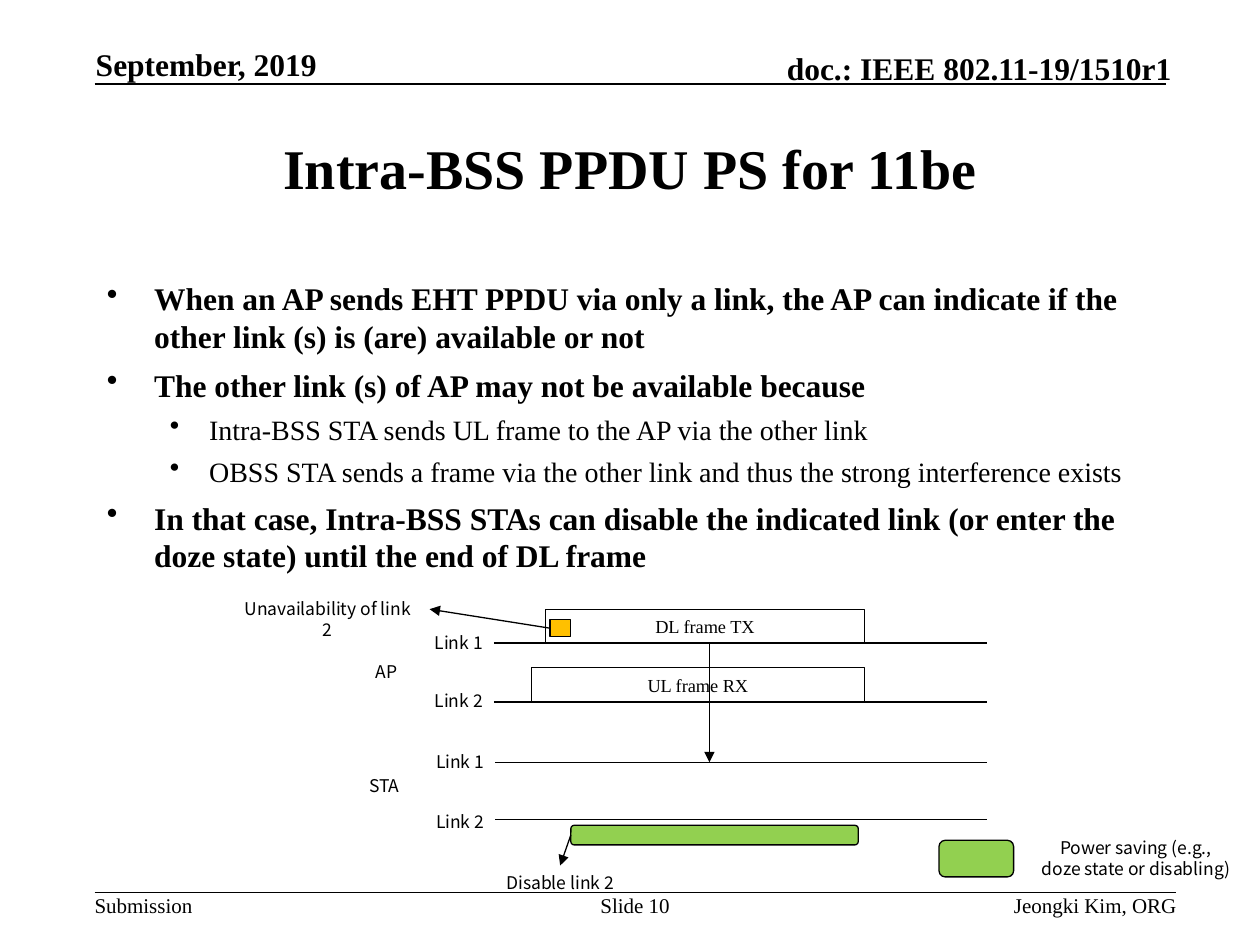
from dataclasses import dataclass

from lxml.etree import SubElement
from pptx import Presentation
from pptx.dml.color import RGBColor
from pptx.enum.shapes import MSO_CONNECTOR as Conn, MSO_SHAPE as Geo
from pptx.enum.text import MSO_ANCHOR as Anchor, PP_ALIGN as Align
from pptx.oxml.ns import qn
from pptx.util import Pt

SERIF = "Times New Roman"
SANS = "Noto Sans CJK KR"
BLACK, GREEN, AMBER = "000000", "92D050", "FFC000"
TOP, LEFT, RIGHT = 0, 1, 3


@dataclass
class Style:
    size: float
    face: str = SERIF
    bold: bool = False


@dataclass
class Label:
    text: str
    box: tuple
    style: Style
    align: Align = Align.LEFT
    anchor: Anchor = Anchor.TOP
    inset: bool = False
    wrap: bool = True


@dataclass
class Lane:
    name: str
    y: float
    left: float
    top: float


@dataclass
class Point:
    text: str
    level: int = 0


HEAD = Style(18, bold=True)
FOOT = Style(12)
NOTE = Style(10, SANS)
FRAME = Style(10.5)

LABELS = [
    Label("September, 2019", (54.7, 26, 148, 21.6), HEAD, anchor=Anchor.BOTTOM),
    Label("doc.: IEEE 802.11-19/1510r1", (393.8, 28, 275.8, 21.6), HEAD,
          Align.RIGHT, Anchor.BOTTOM),
    Label("Intra-BSS PPDU PS for 11be", (54, 54, 612, 83.5),
          Style(32, bold=True), Align.CENTER, Anchor.MIDDLE, True),
    Label("Submission", (54, 510, 56, 14.4), FOOT, wrap=False),
    Label("Slide 10", (342, 510, 41.8, 28.8), FOOT, Align.CENTER),
    Label("Jeongki Kim, ORG", (422, 510, 250.4, 14.4), FOOT, Align.RIGHT),
]

POINTS = [
    Point("When an AP sends EHT PPDU via only a link, the AP can indicate "
          "if the other link (s) is (are) available or not"),
    Point("The other link (s) of AP may not be available because"),
    Point("Intra-BSS STA sends UL frame to the AP via the other link", 1),
    Point("OBSS STA sends a frame via the other link and thus the strong "
          "interference exists", 1),
    Point("In that case, Intra-BSS STAs can disable the indicated link "
          "(or enter the doze state) until the end of DL frame"),
]
# Style, left margin, hanging indent and space before of each level
LEVELS = [(HEAD, 27, 27, 6), (Style(16), 58.5, 22.5, 5)]

LANES = [
    Lane("Link 1", 367.5, 282.2, 357.8),
    Lane("Link 2", 401.2, 282.2, 391),
    Lane("Link 1", 435.6, 283, 425.5),
    Lane("Link 2", 468.5, 283, 460),
]
LANE_END = 563.8


def color(code: str) -> RGBColor:
    return RGBColor.from_string(code)


def write(para, text: str, style: Style) -> None:
    run = para.add_run()
    run.text = text
    font = run.font
    font.size, font.name, font.bold = Pt(style.size), style.face, style.bold
    font.color.rgb = color(BLACK)


def add_label(slide, item: Label):
    box = slide.shapes.add_textbox(*map(Pt, item.box))
    frame = box.text_frame
    frame.word_wrap = item.wrap
    frame.vertical_anchor = item.anchor
    if not item.inset:
        frame.margin_left = frame.margin_right = 0
        frame.margin_top = frame.margin_bottom = 0
    for i, line in enumerate(item.text.split("\n")):
        para = frame.add_paragraph() if i else frame.paragraphs[0]
        para.alignment = item.align
        write(para, line, item.style)
    return box


def add_note(slide, text: str, *box: float, wrap: bool = True):
    return add_label(slide, Label(text, box, NOTE, Align.CENTER,
                                  inset=True, wrap=wrap))


def add_points(slide, points: list) -> None:
    frame = slide.shapes.add_textbox(Pt(54), Pt(156.2), Pt(612), Pt(324)).text_frame
    frame.word_wrap = True
    for i, point in enumerate(points):
        style, margin, hang, gap = LEVELS[point.level]
        para = frame.add_paragraph() if i else frame.paragraphs[0]
        para.level = point.level
        props = para._p.get_or_add_pPr()
        props.set("marL", str(Pt(margin)))
        props.set("indent", str(-Pt(hang)))
        SubElement(props, qn("a:buChar")).set("char", "•")
        if i:
            para.space_before = Pt(gap)
        write(para, point.text, style)


def add_box(slide, geo: Geo, *box: float, fill: str = "", text: str = ""):
    shape = slide.shapes.add_shape(geo, *map(Pt, box))
    shape.shadow.inherit = False
    if fill:
        shape.fill.solid()
        shape.fill.fore_color.rgb = color(fill)
    else:
        shape.fill.background()
    shape.line.color.rgb = color(BLACK)
    shape.line.width = Pt(0.75)
    if text:
        para = shape.text_frame.paragraphs[0]
        para.alignment = Align.CENTER
        write(para, text, FRAME)
    return shape


def add_line(slide, *ends: float, width: float = 0.75, arrow: bool = False):
    line = slide.shapes.add_connector(Conn.STRAIGHT, *map(Pt, ends))
    line.line.color.rgb = color(BLACK)
    line.line.width = Pt(width)
    if arrow:
        SubElement(line.line._get_or_add_ln(), qn("a:tailEnd")).set("type", "triangle")
    SubElement(line._element.spPr, qn("a:effectLst"))
    return line


def add_link(slide, start, side: int, end, edge: int) -> None:
    """Join the sides of two shapes with an arrow."""
    line = add_line(slide, 0, 0, 0, 0, arrow=True)
    line.begin_connect(start, side)
    line.end_connect(end, edge)


def add_chart(slide) -> None:
    """Draw the timing of the AP and STA links."""
    for lane in LANES:
        add_line(slide, lane.left, lane.y, LANE_END, lane.y)
        add_note(slide, lane.name, lane.left - 41, lane.top, 41.8, 19.4, wrap=False)
    add_note(slide, "AP", 200.6, 374.4, 40.3, 19.4)
    add_note(slide, "STA", 198.7, 439.5, 41.8, 19.4)

    add_box(slide, Geo.RECTANGLE, 311.8, 348.2, 182.2, 19.3, text="DL frame TX")
    add_box(slide, Geo.RECTANGLE, 303.6, 381.6, 190.4, 19.6, text="UL frame RX")
    add_line(slide, 405.4, LANES[0].y, 405.4, LANES[2].y, arrow=True)

    field = add_box(slide, Geo.RECTANGLE, 314.4, 354.2, 11.8, 9.6, fill=AMBER)
    busy = add_note(slide, "Unavailability of link 2", 128.9, 338.4, 116.6, 19.4)
    add_link(slide, field, LEFT, busy, RIGHT)

    doze = add_box(slide, Geo.ROUNDED_RECTANGLE, 326.2, 471.6, 164.2, 11.2, fill=GREEN)
    off = add_note(slide, "Disable link 2", 280.1, 494.6, 80, 19.4)
    add_link(slide, doze, LEFT, off, TOP)

    add_box(slide, Geo.ROUNDED_RECTANGLE, 536.6, 480.2, 42.6, 20.9, fill=GREEN)
    add_note(slide, "Power saving (e.g.,\ndoze state or disabling)",
             587.5, 474.5, 123.1, 31.7, wrap=False)


def main() -> None:
    deck = Presentation()
    deck.slide_width, deck.slide_height = Pt(720), Pt(540)
    slide = deck.slides.add_slide(deck.slide_layouts[6])
    add_line(slide, 54, 48.2, 666, 48.2, width=1)
    add_line(slide, 54, 510, 672, 510, width=1)
    for item in LABELS:
        add_label(slide, item)
    add_points(slide, POINTS)
    add_chart(slide)
    deck.save("out.pptx")


if __name__ == "__main__":
    main()
